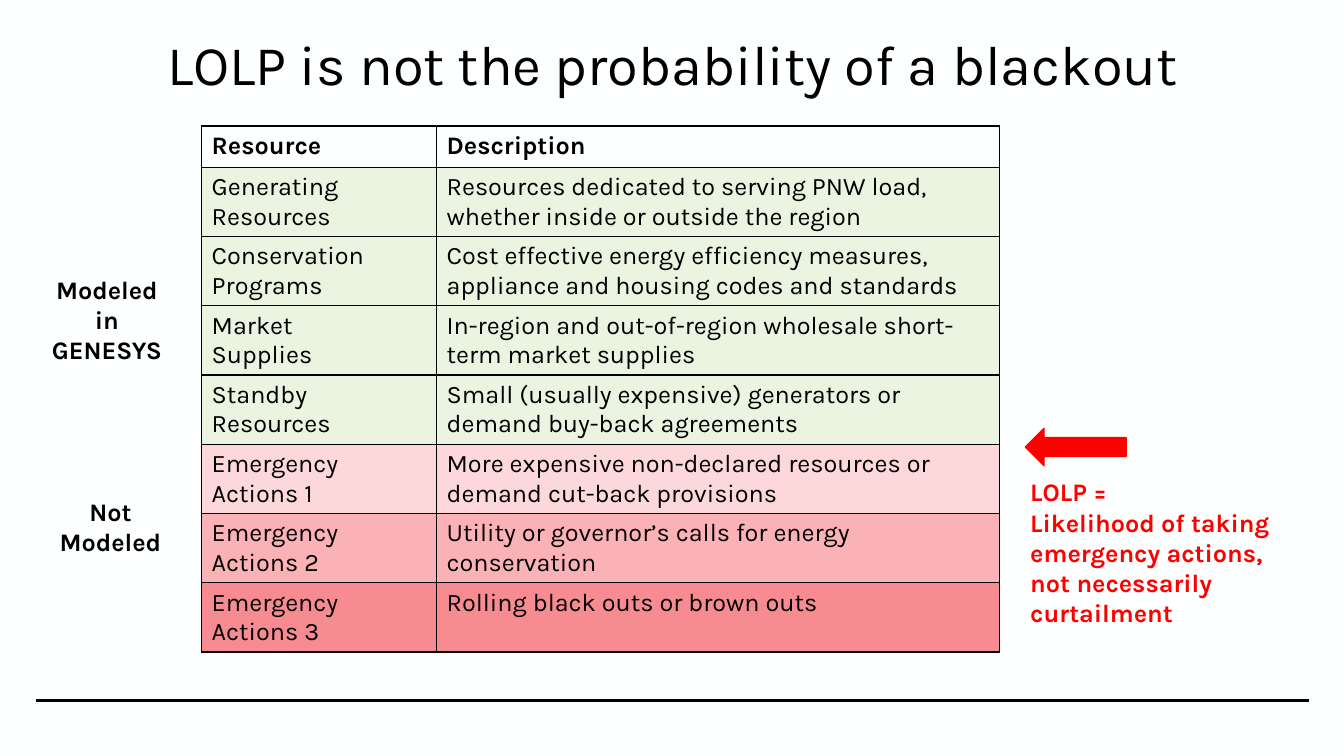
import pptx
import pptx.util
import pptx.dml.color
import pptx.enum.shapes
import pptx.enum.text
import pptx.oxml
import pptx.oxml.ns

Inch = pptx.util.Inches
Align = pptx.enum.text.PP_ALIGN
Anchor = pptx.enum.text.MSO_ANCHOR
Shape = pptx.enum.shapes.MSO_SHAPE

COLORS = {
    "paper": "FEFFFF", "ink": "000000", "alert": "FF0000", "green": "EBF3E1",
    "pink": "FCD8DB", "rose": "FAB2B6", "red": "F78B92",
}


def color(name):
    return pptx.dml.color.RGBColor.from_string(COLORS[name])


def write(frame, lines, size=18, bold=False, ink="ink", align=Align.LEFT):
    frame.word_wrap = True
    for i, line in enumerate(lines):
        para = frame.add_paragraph() if i else frame.paragraphs[0]
        para.alignment = align
        run = para.add_run()
        run.text = line
        run.font.name = "Karla"
        run.font.size = pptx.util.Pt(size)
        run.font.bold = bold
        run.font.color.rgb = color(ink)


# Slide
deck = pptx.Presentation()
deck.slide_width, deck.slide_height = Inch(13.33), Inch(7.5)
slide = deck.slides.add_slide(deck.slide_layouts[5])
slide.background.fill.solid()
slide.background.fill.fore_color.rgb = color("paper")

# Title
title = slide.shapes.title
title.left, title.top, title.width, title.height = map(Inch, (0.5, 0.25, 12.34, 0.83))
title.text_frame.vertical_anchor = Anchor.MIDDLE
write(title.text_frame, ["LOLP is not the probability of a blackout"], 40, align=Align.CENTER)
title.text_frame.paragraphs[0].line_spacing = 0.9

# Footer rule
rule = slide.shapes.add_connector(
    pptx.enum.shapes.MSO_CONNECTOR.STRAIGHT, Inch(0.36), Inch(6.95), Inch(12.98), Inch(6.95))
rule.line.color.rgb = color("ink")
rule.line.width = pptx.util.Pt(2.5)
rule._element.spPr.append(pptx.oxml.parse_xml(
    f'<a:effectLst {pptx.oxml.ns.nsdecls("a")}/>'))

# Resource table: fill, resource lines, description
rows = [
    ("paper", ["Resource"], "Description"),
    ("green", ["Generating Resources"],
     "Resources dedicated to serving PNW load, whether inside or outside the region"),
    ("green", ["Conservation", "Programs"],
     "Cost effective energy efficiency measures, appliance and housing codes and standards"),
    ("green", ["Market", "Supplies"],
     "In-region and out-of-region wholesale short-term market supplies"),
    ("green", ["Standby", "Resources"],
     "Small (usually expensive) generators or demand buy-back agreements"),
    ("pink", ["Emergency", "Actions 1"],
     "More expensive non-declared resources or demand cut-back provisions"),
    ("rose", ["Emergency", "Actions 2"],
     "Utility or governor’s calls for energy conservation"),
    ("red", ["Emergency", "Actions 3"], "Rolling black outs or brown outs"),
]
wide = (2.33, 5.58)
high = 0.41
table = slide.shapes.add_table(
    len(rows), len(wide), Inch(2), Inch(1.25), Inch(sum(wide)), Inch(high * len(rows))).table
table.horz_banding = False
for col, width in zip(table.columns, wide):
    col.width = Inch(width)
for r, (fill, name, about) in enumerate(rows):
    table.rows[r].height = Inch(high)
    for c, lines in enumerate((name, [about])):
        cell = table.cell(r, c)
        write(cell.text_frame, lines, bold=r == 0)
        # Cell borders
        for side in ("lnL", "lnR", "lnT", "lnB"):
            cell._tc.get_or_add_tcPr().append(pptx.oxml.parse_xml(
                f'<a:{side} {pptx.oxml.ns.nsdecls("a")} w="12700"><a:solidFill>'
                f'<a:srgbClr val="{COLORS["ink"]}"/></a:solidFill></a:{side}>'))
        cell.fill.solid()
        cell.fill.fore_color.rgb = color(fill)

# Side labels and LOLP note
notes = [
    ((0.37, 2.67, 1.38, 1.01), ["Modeled in GENESYS"], "ink", Align.CENTER),
    ((0.44, 4.87, 1.31, 0.71), ["Not Modeled"], "ink", Align.CENTER),
    ((10.12, 4.68, 2.67, 1.62),
     ["LOLP =", "Likelihood of taking emergency actions, not necessarily curtailment"],
     "alert", Align.LEFT),
]
for place, lines, ink, align in notes:
    box = slide.shapes.add_textbox(*map(Inch, place))
    write(box.text_frame, lines, bold=True, ink=ink, align=align)
    box.text_frame.auto_size = pptx.enum.text.MSO_AUTO_SIZE.SHAPE_TO_FIT_TEXT

# Arrow to the first emergency action
arrow = slide.shapes.add_shape(Shape.LEFT_ARROW, *map(Inch, (10.17, 4.25, 1, 0.37)))
arrow.shadow.inherit = False
arrow.fill.solid()
arrow.fill.fore_color.rgb = color("alert")
arrow.line.color.rgb = color("alert")
arrow.line.width = pptx.util.Pt(1)

deck.save("out.pptx")
